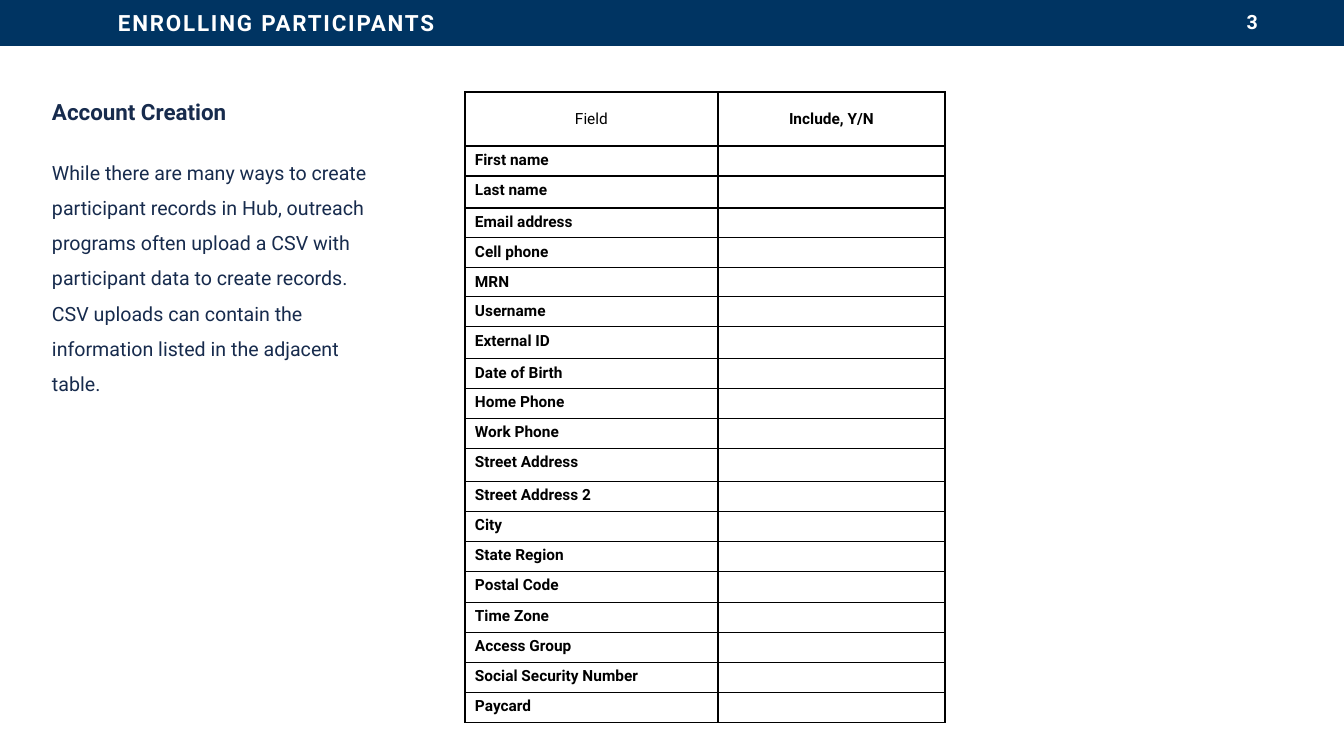
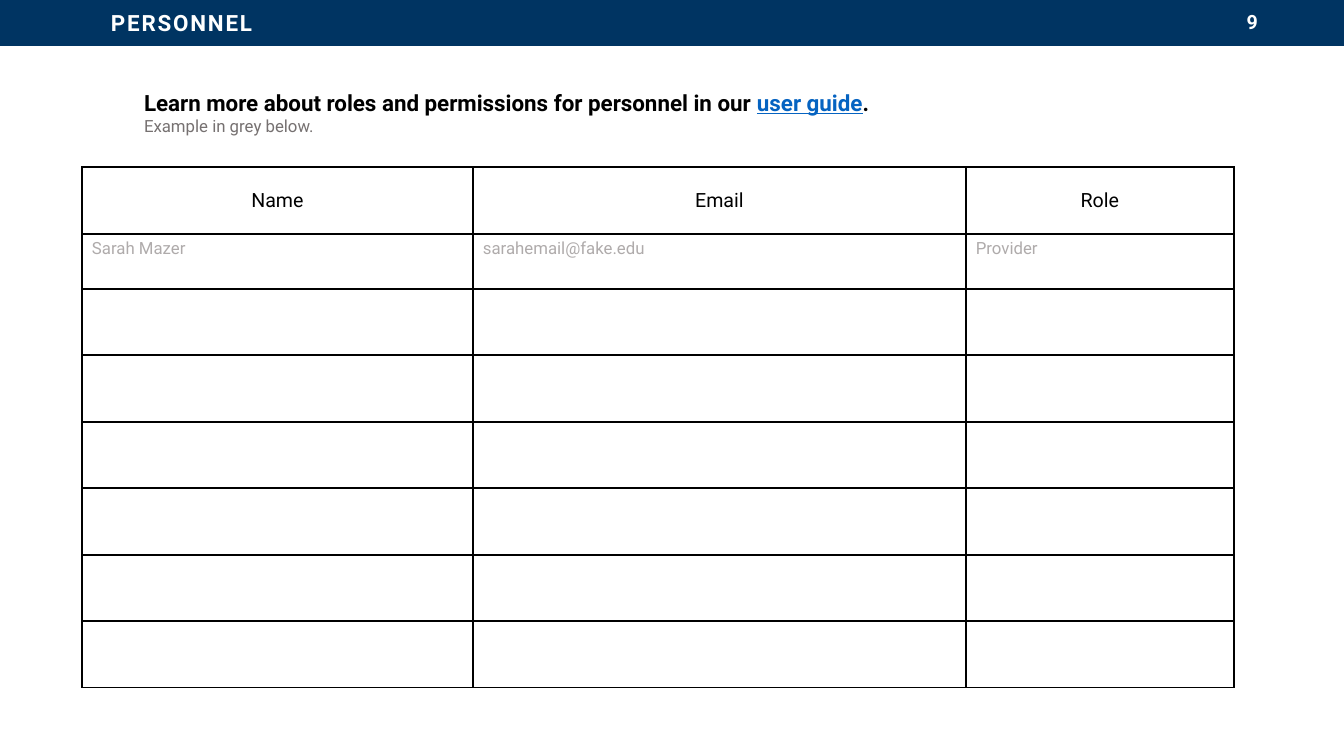
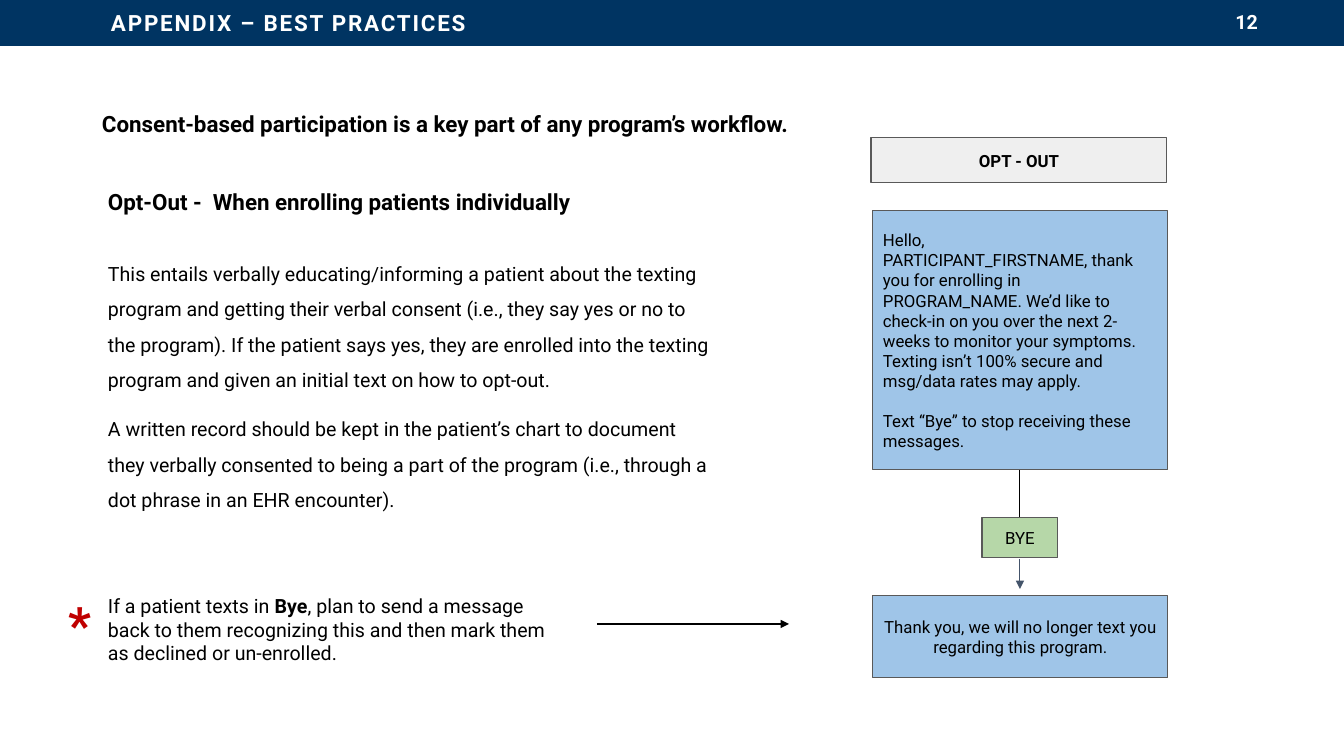
from dataclasses import dataclass, replace

from lxml import etree
from pptx import Presentation
from pptx.dml.color import RGBColor
from pptx.enum.shapes import MSO_CONNECTOR, MSO_SHAPE
from pptx.enum.text import MSO_ANCHOR, MSO_AUTO_SIZE, PP_ALIGN
from pptx.oxml.ns import qn
from pptx.util import Emu, Pt

LEFT, CENTER, RIGHT = PP_ALIGN.LEFT, PP_ALIGN.CENTER, PP_ALIGN.RIGHT
TOP, MIDDLE = MSO_ANCHOR.TOP, MSO_ANCHOR.MIDDLE
NO_AUTOFIT = MSO_AUTO_SIZE.NONE
RECTANGLE = MSO_SHAPE.RECTANGLE
STRAIGHT = MSO_CONNECTOR.STRAIGHT

SLIDE_WIDTH, SLIDE_HEIGHT = 1344, 756
EMU_PER_PX = 12192000 / SLIDE_WIDTH


@dataclass(frozen=True)
class Theme:
    font: str = "Roboto"
    navy: str = "003462"
    white: str = "FFFFFF"
    black: str = "000000"
    ink: str = "172B4D"
    link: str = "0563C1"
    hint: str = "767171"
    sample: str = "AFABAB"
    alert: str = "C00000"
    slate: str = "44546A"
    outline: str = "595959"
    message: str = "9FC5E8"
    reply: str = "B6D7A8"
    label: str = "EFEFEF"
    heading_size: int = 16
    body_size: int = 14
    small_size: int = 12
    field_size: int = 11
    mark_size: int = 36
    title_spacing: int = 130
    thin_line: float = 0.75
    line: float = 1


THEME = Theme()


@dataclass(frozen=True)
class Style:
    size: int
    color: str = THEME.black
    bold: bool = False
    underline: bool = False


HEADING = Style(THEME.heading_size, bold=True)
BODY = Style(THEME.body_size)
SMALL = Style(THEME.small_size)
FIELD = Style(THEME.field_size)
FIELD_BOLD = replace(FIELD, bold=True)


@dataclass(frozen=True)
class Block:
    runs: tuple
    align: PP_ALIGN = LEFT
    line_spacing: float = 1.0
    space_before: int = 0


def block(text, style, **layout):
    return Block(((text, style),), **layout)


def px(length):
    return Emu(round(length * EMU_PER_PX))


def rgb(color):
    return RGBColor.from_string(color)


def place(shape, box):
    shape.left, shape.top, shape.width, shape.height = map(px, box)


def style_run(run, style):
    font = run.font
    font.name = THEME.font
    font.size = Pt(style.size)
    font.bold = style.bold
    font.underline = style.underline
    font.color.rgb = rgb(style.color)


def write(text_frame, blocks, anchor=TOP):
    text_frame.word_wrap = True
    text_frame.auto_size = NO_AUTOFIT
    text_frame.vertical_anchor = anchor
    text_frame.margin_left = text_frame.margin_right = px(10)
    text_frame.margin_top = text_frame.margin_bottom = px(5)
    for index, content in enumerate(blocks):
        paragraph = text_frame.add_paragraph() if index else text_frame.paragraphs[0]
        paragraph.alignment = content.align
        paragraph.line_spacing = content.line_spacing
        paragraph.space_before = Pt(content.space_before)
        for text, style in content.runs:
            run = paragraph.add_run()
            run.text = text
            style_run(run, style)


def add_text(slide, box, blocks, anchor=TOP):
    text_box = slide.shapes.add_textbox(*map(px, box))
    write(text_box.text_frame, blocks, anchor)


def fill_body(slide, box, blocks):
    body = slide.placeholders[1]
    place(body, box)
    write(body.text_frame, blocks)
    for paragraph in body.text_frame.paragraphs:
        properties = paragraph._p.get_or_add_pPr()
        properties.set("marL", "0")
        properties.set("indent", "0")
        etree.SubElement(properties, qn("a:buNone"))


def add_box(slide, box, fill, blocks):
    shape = slide.shapes.add_shape(RECTANGLE, *map(px, box))
    shape.shadow.inherit = False
    shape.fill.solid()
    shape.fill.fore_color.rgb = rgb(fill)
    shape.line.color.rgb = rgb(THEME.outline)
    shape.line.width = Pt(THEME.thin_line)
    write(shape.text_frame, blocks, MIDDLE)


def add_line(slide, start, end, color, width, arrow=False):
    connector = slide.shapes.add_connector(STRAIGHT, *map(px, start + end))
    connector.line.color.rgb = rgb(color)
    connector.line.width = Pt(width)
    if arrow:
        etree.SubElement(connector.line._get_or_add_ln(), qn("a:tailEnd"), type="triangle")
    etree.SubElement(connector._element.spPr, qn("a:effectLst"))


def add_borders(cell):
    properties = cell._tc.get_or_add_tcPr()
    for side in ("a:lnL", "a:lnR", "a:lnT", "a:lnB"):
        border = etree.SubElement(properties, qn(side), w=str(Pt(THEME.line)))
        fill = etree.SubElement(border, qn("a:solidFill"))
        etree.SubElement(fill, qn("a:srgbClr"), val=THEME.black)


def fill_cell(cell, text, style, header):
    add_borders(cell)
    cell.fill.background()
    cell.vertical_anchor = MIDDLE if header else TOP
    cell.margin_left = cell.margin_right = px(10)
    cell.margin_top = cell.margin_bottom = px(5)
    paragraph = cell.text_frame.paragraphs[0]
    if not text:
        size = str(style.size * 100)
        etree.SubElement(paragraph._p, qn("a:endParaRPr"), sz=size)
        return
    paragraph.text = text
    paragraph.alignment = CENTER if header else LEFT
    style_run(paragraph.runs[0], style)


def add_grid(slide, left, top, widths, heights, rows):
    box = (left, top, sum(widths), sum(heights))
    frame = slide.shapes.add_table(len(heights), len(widths), *map(px, box))
    table = frame.table
    table.first_row = table.horz_banding = False
    for column, width in zip(table.columns, widths):
        column.width = px(width)
    for row_index, (row, height, contents) in enumerate(zip(table.rows, heights, rows)):
        row.height = px(height)
        for cell, (text, style) in zip(row.cells, contents):
            fill_cell(cell, text, style, header=row_index == 0)


def new_slide(presentation, title_text, number, title_left=101):
    slide = presentation.slides.add_slide(presentation.slide_layouts[1])
    title = slide.shapes.title
    place(title, (0, 0, SLIDE_WIDTH, 46))
    title.fill.solid()
    title.fill.fore_color.rgb = rgb(THEME.navy)
    heading = replace(HEADING, color=THEME.white)
    write(title.text_frame, [block(title_text, heading)], MIDDLE)
    title.text_frame.margin_left = px(title_left + 10)
    run = title.text_frame.paragraphs[0].runs[0]
    run._r.get_or_add_rPr().set("spc", str(THEME.title_spacing))
    page_style = Style(THEME.body_size, THEME.white, bold=True)
    add_text(slide, (966, 2, 302, 40), [block(number, page_style, align=RIGHT)], MIDDLE)
    return slide


def build_enrolling(presentation):
    slide = new_slide(presentation, "ENROLLING PARTICIPANTS", "3", title_left=108)
    fields = (
        "First name", "Last name", "Email address", "Cell phone", "MRN",
        "Username", "External ID", "Date of Birth", "Home Phone", "Work Phone",
        "Street Address", "Street Address 2", "City", "State Region",
        "Postal Code", "Time Zone", "Access Group", "Social Security Number",
        "Paycard",
    )
    special_heights = {
        "Last name": 32, "MRN": 29, "External ID": 32,
        "Street Address": 33, "Postal Code": 31,
    }
    heights = [54] + [special_heights.get(field, 30) for field in fields]
    rows = [(("Field", FIELD), ("Include, Y/N", FIELD_BOLD))]
    rows += [((field, FIELD_BOLD), ("", FIELD)) for field in fields]
    add_grid(slide, 465, 92, (253, 227), heights, rows)
    fill_body(slide, (42, 93, 356, 307), [
        block("Account Creation", replace(HEADING, color=THEME.ink)),
        block(
            "While there are many ways to create participant records in Hub, "
            "outreach programs often upload a CSV with participant data to create "
            "records. CSV uploads can contain the information listed in the "
            "adjacent table.",
            replace(BODY, color=THEME.ink), line_spacing=1.5, space_before=17),
    ])


def build_personnel(presentation):
    slide = new_slide(presentation, "PERSONNEL", "9")
    sample = replace(SMALL, color=THEME.sample)
    heights = [67, 55] + [66, 67] * 3
    rows = [
        [(text, BODY) for text in ("Name", "Email", "Role")],
        [(text, sample) for text in ("Sarah Mazer", "sarahemail@fake.edu", "Provider")],
    ]
    rows += [[("", SMALL)] * 3] * 6
    add_grid(slide, 82, 167, (391, 493, 268), heights, rows)
    fill_body(slide, (134, 84, 786, 64), [
        Block((
            ("Learn more about roles and permissions for personnel in our ", HEADING),
            ("user guide", replace(HEADING, color=THEME.link, underline=True)),
            (".", HEADING),
        )),
        block("Example in grey below.", replace(SMALL, color=THEME.hint)),
    ])


def add_opt_out_flow(slide):
    center = 1020
    add_line(slide, (center, 470), (center, 517), THEME.black, THEME.thin_line)
    add_line(slide, (center, 559), (center, 589), THEME.slate, THEME.thin_line, arrow=True)
    add_box(slide, (871, 138, 296, 45), THEME.label, [
        block("OPT - OUT", replace(SMALL, bold=True), align=CENTER)])
    add_box(slide, (873, 211, 295, 259), THEME.message, [
        block("Hello,", SMALL),
        block(
            "PARTICIPANT_FIRSTNAME, thank you for enrolling in PROGRAM_NAME. "
            "We’d like to check-in on you over the next 2-weeks to monitor your "
            "symptoms. Texting isn’t 100% secure and msg/data rates may apply.",
            SMALL),
        block("Text “Bye” to stop receiving these messages.", SMALL, space_before=14),
    ])
    add_box(slide, (982, 517, 76, 41), THEME.reply, [
        block("BYE", SMALL, align=CENTER)])
    add_box(slide, (873, 596, 295, 82), THEME.message, [
        block("Thank you, we will no longer text you regarding this program.",
              SMALL, align=CENTER)])


def build_best_practices(presentation):
    slide = new_slide(presentation, "APPENDIX – BEST PRACTICES", "12")
    add_text(slide, (92, 105, 770, 37), [
        block("Consent-based participation is a key part of any program’s workflow.",
              HEADING)])
    fill_body(slide, (98, 170, 624, 359), [
        block("Opt-Out -  When enrolling patients individually", HEADING,
              line_spacing=1.5),
        block(
            "This entails verbally educating/informing a patient about the texting "
            "program and getting their verbal consent (i.e., they say yes or no to "
            "the program). If the patient says yes, they are enrolled into the "
            "texting program and given an initial text on how to opt-out.",
            BODY, line_spacing=1.5, space_before=25),
        block(
            "A written record should be kept in the patient’s chart to document "
            "they verbally consented to being a part of the program (i.e., through "
            "a dot phrase in an EHR encounter).",
            BODY, line_spacing=1.5, space_before=10),
    ])
    add_text(slide, (58, 588, 49, 72), [
        block("*", Style(THEME.mark_size, THEME.alert, bold=True))])
    add_text(slide, (98, 589, 466, 82), [
        Block((
            ("If a patient texts in ", BODY),
            ("Bye", replace(BODY, bold=True)),
            (", plan to send a message back to them recognizing this and then "
             "mark them as declined or un-enrolled.", BODY),
        ))])
    add_line(slide, (597, 624), (789, 624), THEME.black, THEME.line, arrow=True)
    add_opt_out_flow(slide)


def main():
    presentation = Presentation()
    presentation.slide_width = px(SLIDE_WIDTH)
    presentation.slide_height = px(SLIDE_HEIGHT)
    build_enrolling(presentation)
    build_personnel(presentation)
    build_best_practices(presentation)
    presentation.save("out.pptx")


if __name__ == "__main__":
    main()
